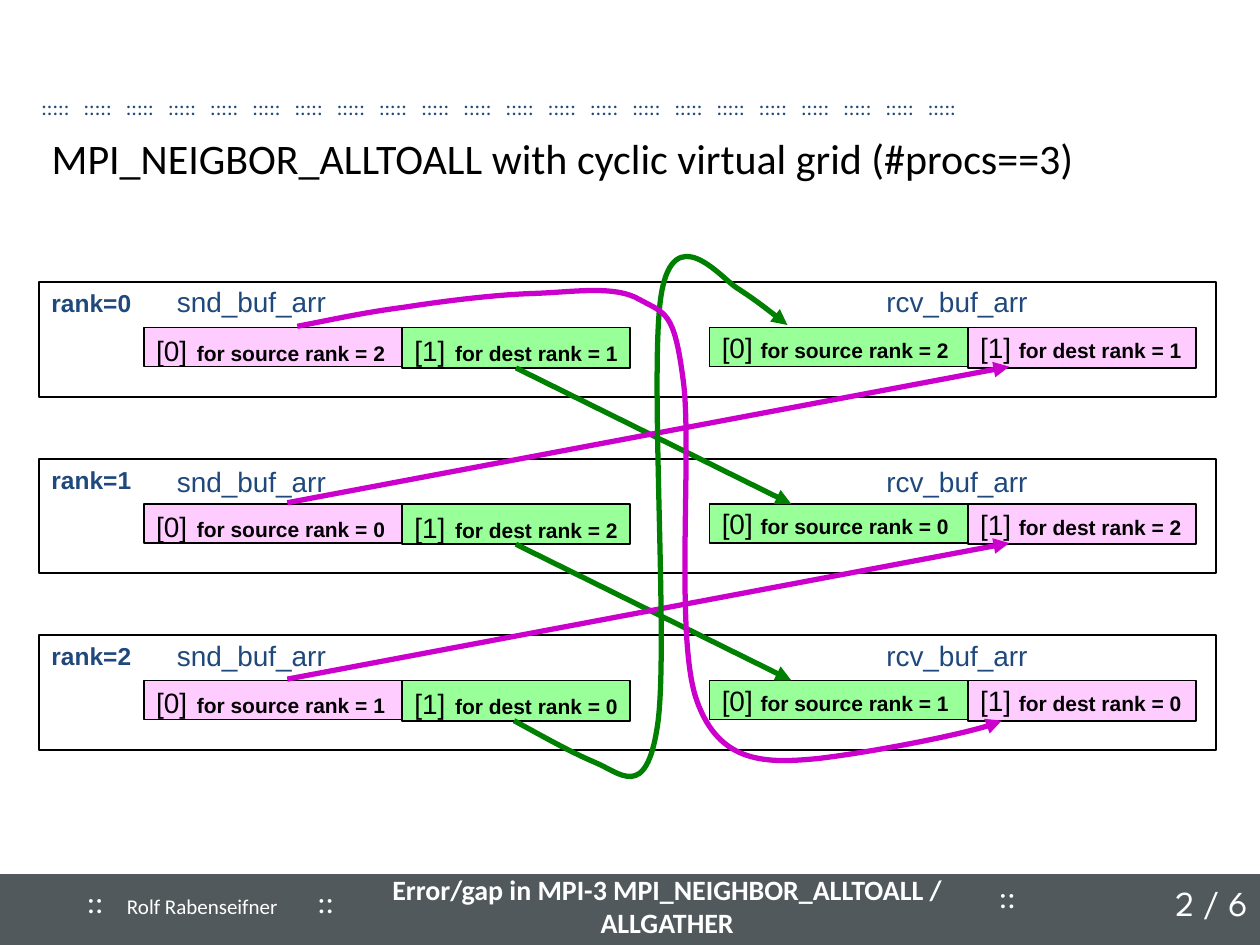
from dataclasses import dataclass
from typing import NamedTuple

from lxml.etree import SubElement as Sub
from pptx import Presentation
from pptx.dml.color import RGBColor as Rgb
from pptx.enum.shapes import MSO_CONNECTOR as Link, MSO_SHAPE as Kind
from pptx.enum.text import MSO_ANCHOR as Anchor, PP_ALIGN as Align
from pptx.oxml.ns import qn
from pptx.util import Inches, Pt


@dataclass(frozen=True)
class Theme:
    ink: str = "000000"
    white: str = "FFFFFF"
    navy: str = "1F497D"
    slate: str = "51595D"
    lime: str = "99FF99"
    pink: str = "FFCCFF"
    green: str = "008000"
    plum: str = "CC00CC"
    sans: str = "Arial"
    head: str = "Calibri"
    num: str = "League Spartan"
    small: int = 12
    rank: int = 14
    text: int = 16
    dots: int = 18
    page: int = 20
    title: int = 24


class Box(NamedTuple):
    x: float
    y: float
    w: float
    h: float


class Bit(NamedTuple):
    text: str
    size: int
    color: str
    font: str
    bold: bool = False


class Cell(NamedTuple):
    x: float
    w: float
    h: float
    fill: str
    slot: int
    gap: int


T = Theme()
STEP = 1.4
RANKS = 3
PITCH = 0.335
GROUPS = 22
CELLS = [
    Cell(1.14, 2.05, 0.31, T.pink, 0, T.page),
    Cell(3.19, 1.81, 0.32, T.lime, 1, T.page),
    Cell(5.63, 2.05, 0.31, T.lime, 0, T.text),
    Cell(7.68, 1.81, 0.32, T.pink, 1, T.text),
]
LABEL_TOPS = [2.21, 3.64, 5.02]
LOOP = [
    (4.08, 5.72), (4.32, 5.85), (4.51, 5.96), (4.72, 6.05),
    (4.92, 6.13), (5.13, 6.37), (5.22, 5.75),
    (5.31, 5.13), (5.15, 2.91), (5.25, 2.33),
    (5.35, 1.75), (5.71, 2.19), (5.84, 2.28),
    (5.98, 2.37), (6.11, 2.47), (6.25, 2.58),
]
SWEEP = [
    (2.36, 2.59), (2.62, 2.54), (2.89, 2.48), (3.2, 2.44),
    (3.52, 2.39), (3.92, 2.34), (4.23, 2.33),
    (4.55, 2.32), (4.88, 2.26), (5.08, 2.38),
    (5.28, 2.49), (5.35, 2.47), (5.42, 3),
    (5.5, 3.53), (5.35, 5.06), (5.53, 5.56),
    (5.71, 6.07), (6.09, 6.06), (6.5, 6.02),
    (6.91, 5.97), (7.81, 5.8), (7.95, 5.72),
]


def write(shape, bits: list[Bit], align=Align.LEFT, anchor=Anchor.TOP, wrap=True) -> None:
    frame = shape.text_frame
    frame.word_wrap = wrap
    frame.vertical_anchor = anchor
    frame.margin_left = frame.margin_right = Inches(0.1)
    frame.margin_top = frame.margin_bottom = Inches(0.05)
    para = frame.paragraphs[0]
    para.alignment = align
    for bit in bits:
        run = para.add_run()
        run.text = bit.text
        font = run.font
        font.size, font.name, font.bold = Pt(bit.size), bit.font, bit.bold
        font.color.rgb = Rgb.from_string(bit.color)


def label(slide, box: Box, bit: Bit, align=Align.LEFT, anchor=Anchor.TOP, wrap=True):
    shape = slide.shapes.add_textbox(*map(Inches, box))
    write(shape, [bit], align, anchor, wrap)
    return shape


def rect(slide, box: Box, fill: str | None, edge: str, width: int):
    shape = slide.shapes.add_shape(Kind.RECTANGLE, *map(Inches, box))
    shape.shadow.inherit = False
    if fill:
        shape.fill.solid()
        shape.fill.fore_color.rgb = Rgb.from_string(fill)
    else:
        shape.fill.background()
    shape.line.color.rgb = Rgb.from_string(edge)
    shape.line.width = Pt(width)
    return shape


def tip(shape, color: str) -> None:
    shape.line.color.rgb = Rgb.from_string(color)
    shape.line.width = Pt(3)
    Sub(shape.line._get_or_add_ln(), qn("a:tailEnd"), type="triangle")


def arrow(slide, start: tuple, end: tuple, color: str, source=None) -> None:
    line = slide.shapes.add_connector(Link.STRAIGHT, *map(Inches, start + end))
    if source is not None:
        line.begin_connect(source, 2)
    tip(line, color)
    Sub(line._element.spPr, qn("a:effectLst"))


def curve(slide, knots: list[tuple], box: Box, color: str) -> None:
    spots = [(Inches(x), Inches(y)) for x, y in knots]
    pen = slide.shapes.build_freeform(*spots[0])
    pen.add_line_segments(spots[3::3], close=False)
    shape = pen.convert_to_shape()
    shape.left, shape.top, shape.width, shape.height = map(Inches, box)
    route = next(shape._element.iter(qn("a:path")))
    route.set("w", str(shape.width))
    route.set("h", str(shape.height))
    for child in list(route):
        route.remove(child)
    parts = [("a:moveTo", spots[:1])]
    parts += [("a:cubicBezTo", spots[i:i + 3]) for i in range(1, len(spots), 3)]
    for tag, points in parts:
        part = Sub(route, qn(tag))
        for x, y in points:
            Sub(part, qn("a:pt"), x=str(x - shape.left), y=str(y - shape.top))
    shape.shadow.inherit = False
    shape.fill.background()
    tip(shape, color)


def row(slide, rank: int) -> list:
    drop = rank * STEP
    frame = rect(slide, Box(0.31, 2.24 + drop, 9.34, 0.91), None, T.ink, 1)
    write(frame, [Bit(f"rank={rank}", T.rank, T.navy, T.sans, True)], wrap=False)
    peers = (f"for source rank = {(rank - 1) % RANKS}", f"for dest rank = {(rank + 1) % RANKS}")
    made = []
    for cell in CELLS:
        shape = rect(slide, Box(cell.x, 2.6 + drop, cell.w, cell.h), cell.fill, T.ink, 1)
        write(shape, [
            Bit(f"[{cell.slot}]", T.text, T.ink, T.sans),
            Bit(" ", cell.gap, T.ink, T.sans),
            Bit(peers[cell.slot], T.small, T.ink, T.sans, True),
        ], anchor=Anchor.MIDDLE, wrap=False)
        made.append(shape)
    for name, x, w in (("snd_buf_arr", 1.3, 1.39), ("rcv_buf_arr", 6.93, 1.33)):
        label(slide, Box(x, LABEL_TOPS[rank], w, 0.37),
              Bit(name, T.text, T.navy, T.sans), Align.CENTER, wrap=False)
    return made


def dress(slide) -> None:
    rect(slide, Box(0, 6.95, 10, 0.55), T.slate, T.slate, 2)
    for x, y in ((0.59, 6.95), (2.42, 6.95), (7.83, 6.91)):
        label(slide, Box(x, y, 0.41, 0.38), Bit("::", T.dots, T.white, T.head))
    rule = label(slide, Box(0.23, 0.7, 8.98, 0.3),
                 Bit("\t".join([":::::"] * GROUPS), T.small, T.navy, T.head))
    tabs = Sub(rule.text_frame.paragraphs[0]._p.get_or_add_pPr(), qn("a:tabLst"))
    for i in range(1, GROUPS):
        Sub(tabs, qn("a:tab"), pos=str(Inches(i * PITCH)), algn="l")
    label(slide, Box(8.05, 6.95, 1.95, 0.43), Bit("2 / 6", T.page, T.white, T.num), Align.RIGHT)
    label(slide, Box(0.91, 6.99, 1.47, 0.4),
          Bit("Rolf Rabenseifner", T.small, T.white, T.head), anchor=Anchor.MIDDLE)
    label(slide, Box(2.67, 6.99, 5.25, 0.4),
          Bit("Error/gap in MPI-3 MPI_NEIGHBOR_ALLTOALL / ALLGATHER",
              T.text, T.white, T.head, True), Align.CENTER, Anchor.MIDDLE)


def main() -> None:
    deck = Presentation()
    deck.slide_width, deck.slide_height = Inches(10), Inches(7.5)
    slide = deck.slides.add_slide(deck.slide_layouts[5])
    title = slide.shapes.title
    title.left, title.top, title.width, title.height = map(Inches, Box(0.31, 1.02, 9.45, 0.46))
    write(title, [Bit("MPI_NEIGBOR_ALLTOALL with cyclic virtual grid (#procs==3)",
                      T.title, T.ink, T.head)], anchor=Anchor.MIDDLE)
    dress(slide)
    rows = [row(slide, rank) for rank in range(RANKS)]
    for i in range(RANKS - 1):
        drop = i * STEP
        arrow(slide, (4.09, 2.92 + drop), (6.28, 4 + drop), T.green, rows[i][1])
        arrow(slide, (2.28, 3.99 + drop), (8.01, 2.91 + drop), T.plum)
    curve(slide, LOOP, Box(4.08, 2.04, 2.17, 4.13), T.green)
    curve(slide, SWEEP, Box(2.36, 2.31, 5.59, 3.73), T.plum)
    deck.save("out.pptx")


if __name__ == "__main__":
    main()
